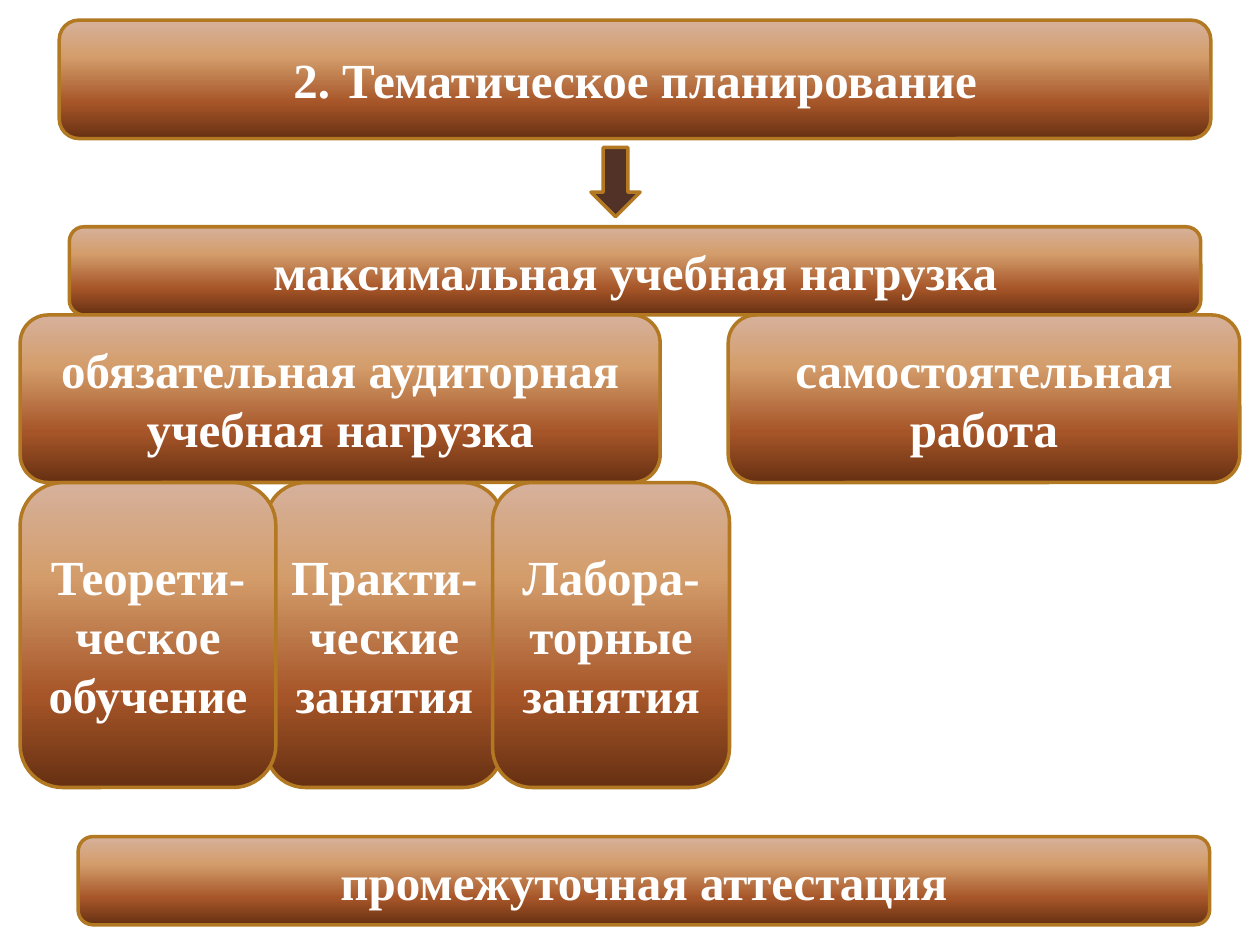
from copy import deepcopy

from pptx import Presentation
from pptx.dml.color import RGBColor
from pptx.enum.shapes import MSO_SHAPE
from pptx.enum.text import MSO_ANCHOR, PP_ALIGN
from pptx.oxml.ns import qn
from pptx.util import Inches, Pt

WHITE = RGBColor(0xFF, 0xFF, 0xFF)
GOLD = RGBColor(0xB2, 0x78, 0x22)
DARK_BROWN = RGBColor(0x52, 0x32, 0x27)
COPPER = [
    (0, RGBColor(0xD6, 0xB1, 0x9C)),
    (0.3, RGBColor(0xD4, 0x9E, 0x6C)),
    (0.7, RGBColor(0xA6, 0x55, 0x28)),
    (1, RGBColor(0x66, 0x30, 0x12)),
]


class PlanSlide:
    font_name = "Times New Roman"
    font_size = Pt(28)
    line_width = Pt(2)

    def __init__(self, slide):
        self.slide = slide

    def outlined(self, preset, left, top, width, height):
        shape = self.slide.shapes.add_shape(
            preset, Inches(left), Inches(top), Inches(width), Inches(height))
        shape.shadow.inherit = False
        shape.line.color.rgb = GOLD
        shape.line.width = self.line_width
        return shape

    def copper_fill(self, shape):
        fill = shape.fill
        fill.gradient()
        fill.gradient_angle = 270
        stop_list = next(shape.element.spPr.iter(qn("a:gsLst")))
        while len(stop_list) < len(COPPER):
            stop_list.append(deepcopy(stop_list[0]))
        for stop, (position, color) in zip(fill.gradient_stops, COPPER):
            stop.position = position
            stop.color.rgb = color

    def box(self, left, top, width, height, *lines):
        shape = self.outlined(MSO_SHAPE.ROUNDED_RECTANGLE, left, top, width, height)
        self.copper_fill(shape)
        frame = shape.text_frame
        frame.word_wrap = True
        frame.vertical_anchor = MSO_ANCHOR.MIDDLE
        for index, line in enumerate(lines):
            paragraph = frame.add_paragraph() if index else frame.paragraphs[0]
            paragraph.alignment = PP_ALIGN.CENTER
            run = paragraph.add_run()
            run.text = line
            run.font.name = self.font_name
            run.font.size = self.font_size
            run.font.bold = True
            run.font.color.rgb = WHITE

    def down_arrow(self, left, top, width, height):
        arrow = self.outlined(MSO_SHAPE.DOWN_ARROW, left, top, width, height)
        arrow.fill.solid()
        arrow.fill.fore_color.rgb = DARK_BROWN


def main():
    presentation = Presentation()
    presentation.slide_width = Inches(10)
    presentation.slide_height = Inches(7.5)
    plan = PlanSlide(presentation.slides.add_slide(presentation.slide_layouts[6]))

    plan.box(0.47, 0.16, 9.14, 0.94, "2. Тематическое планирование")
    plan.down_arrow(4.69, 1.17, 0.39, 0.55)

    bar_width, bar_height = 8.98, 0.7
    plan.box(0.55, 1.8, bar_width, bar_height, "максимальная учебная нагрузка")

    load_top, load_height = 2.5, 1.33
    plan.box(0.16, load_top, 5.08, load_height,
             "обязательная аудиторная учебная нагрузка")
    plan.box(5.78, load_top, 4.06, load_height, "самостоятельная работа")

    lessons_top, lessons_height = load_top + load_height, 2.42
    for left, width, lines in [
        (2.11, 1.88, ["Практи-ческие занятия"]),
        (3.91, 1.88, ["Лабора-", "торные занятия"]),
        (0.16, 2.03, ["Теорети-ческое обучение"]),
    ]:
        plan.box(left, lessons_top, width, lessons_height, *lines)

    plan.box(0.62, 6.64, bar_width, bar_height, "промежуточная аттестация")
    presentation.save("out.pptx")


if __name__ == "__main__":
    main()
